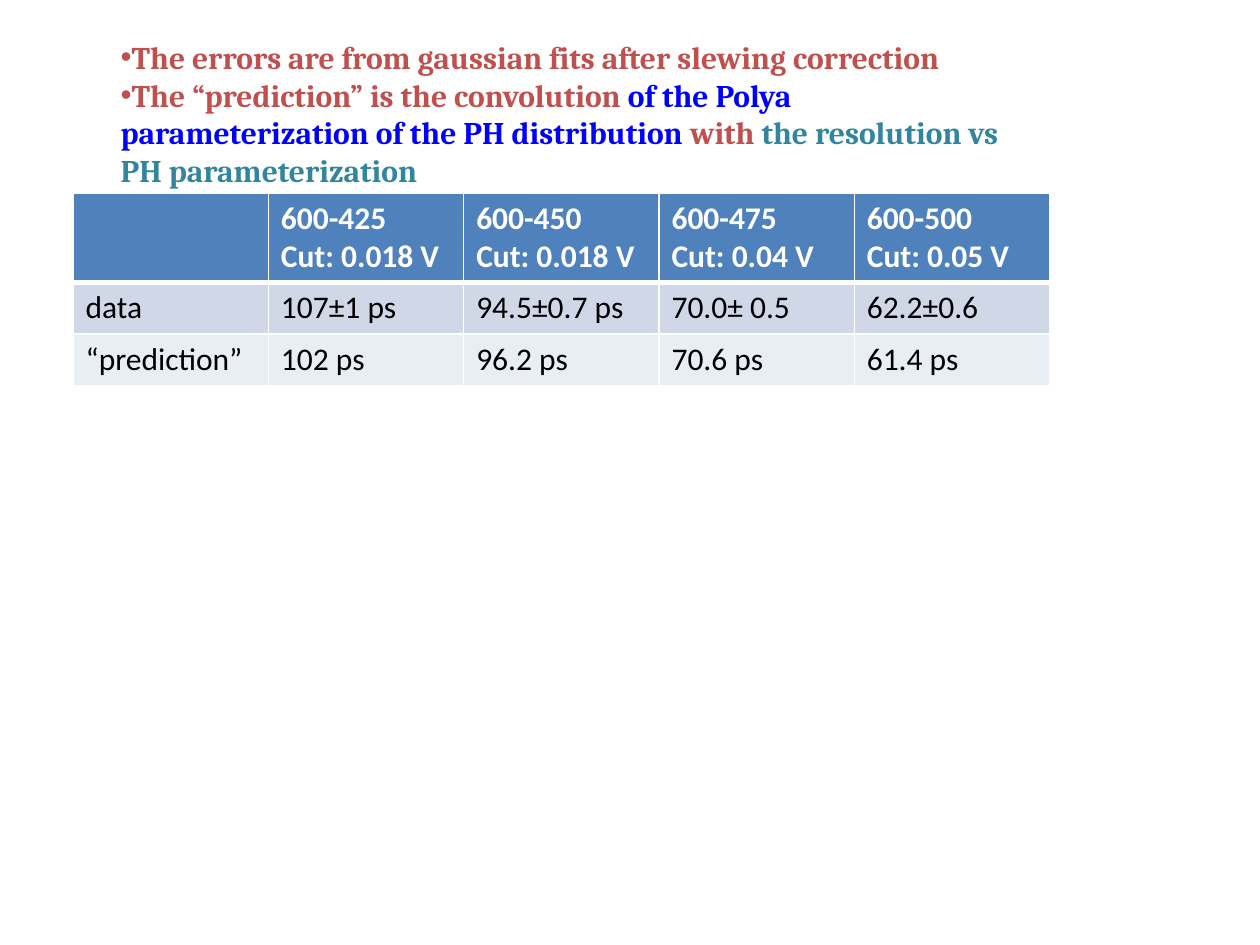
from dataclasses import dataclass

from lxml.etree import SubElement
from pptx import Presentation
from pptx.dml.color import RGBColor
from pptx.enum.text import MSO_AUTO_SIZE
from pptx.oxml import parse_xml
from pptx.oxml.ns import nsdecls, qn
from pptx.util import Inches, Pt

WHITE, BLACK = "FFFFFF", "000000"
RED, BLUE, TEAL = "C0504D", "0000FF", "31859C"


@dataclass
class ColouredText:
    text: str
    colour: str


@dataclass
class TableRow:
    texts: list[str]
    height: float
    fill: str
    colour: str = BLACK
    bold: bool = False
    bottom_border: int = 1


NOTES = [
    [ColouredText("The errors are from gaussian fits after slewing correction", RED)],
    [
        ColouredText("The “prediction” is the convolution ", RED),
        ColouredText("of the Polya parameterization of the PH distribution ", BLUE),
        ColouredText("with ", RED),
        ColouredText("the resolution vs PH parameterization", TEAL),
    ],
]
ROWS = [
    TableRow(
        ["", "600-425\nCut: 0.018 V", "600-450\nCut: 0.018 V",
         "600-475\nCut: 0.04 V", "600-500\nCut: 0.05 V"],
        0.69, "4F81BD", WHITE, True, 3,
    ),
    TableRow(["data", "107±1 ps", "94.5±0.7 ps", "70.0± 0.5", "62.2±0.6"], 0.41, "D0D8E8"),
    TableRow(["“prediction”", "102 ps", "96.2 ps", "70.6 ps", "61.4 ps"], 0.41, "E9EDF4"),
]


def rgb(colour: str) -> RGBColor:
    return RGBColor.from_string(colour)


def format_font(font, name: str, colour: str, bold: bool) -> None:
    font.name = name
    font.size = Pt(18)
    font.bold = bold
    font.color.rgb = rgb(colour)


def add_bullet(paragraph) -> None:
    properties = paragraph._p.get_or_add_pPr()
    SubElement(properties, qn("a:buFont")).set("typeface", "Arial")
    SubElement(properties, qn("a:buChar")).set("char", "•")


def set_borders(cell, top: int, bottom: int) -> None:
    properties = cell._tc.get_or_add_tcPr()
    widths = {"lnL": 1, "lnR": 1, "lnT": top, "lnB": bottom}
    for position, (side, width) in enumerate(widths.items()):
        border = parse_xml(
            f'<a:{side} {nsdecls("a")} w="{Pt(width)}"><a:solidFill>'
            f'<a:srgbClr val="{WHITE}"/></a:solidFill></a:{side}>'
        )
        properties.insert(position, border)


def add_results_table(slide, rows: list[TableRow]) -> None:
    column_count = len(rows[0].texts)
    frame = slide.shapes.add_table(
        len(rows), column_count, Inches(0.58), Inches(1.53),
        Inches(1.55 * column_count), Inches(sum(row.height for row in rows)),
    )
    table = frame.table
    top_border = 1
    for row_index, row in enumerate(rows):
        table.rows[row_index].height = Inches(row.height)
        for column_index, text in enumerate(row.texts):
            cell = table.cell(row_index, column_index)
            cell.fill.solid()
            cell.fill.fore_color.rgb = rgb(row.fill)
            set_borders(cell, top_border, row.bottom_border)
            cell.text_frame.text = text
            for paragraph in cell.text_frame.paragraphs:
                for run in paragraph.runs:
                    format_font(run.font, "Calibri", row.colour, row.bold)
        top_border = row.bottom_border


def add_notes_box(slide, notes: list[list[ColouredText]]) -> None:
    box = slide.shapes.add_textbox(Inches(0.86), Inches(0.25), Inches(7.47), Inches(1.31))
    text_frame = box.text_frame
    text_frame.word_wrap = True
    text_frame.auto_size = MSO_AUTO_SIZE.SHAPE_TO_FIT_TEXT
    for index, parts in enumerate(notes):
        paragraph = text_frame.add_paragraph() if index else text_frame.paragraphs[0]
        add_bullet(paragraph)
        for part in parts:
            run = paragraph.add_run()
            run.text = part.text
            format_font(run.font, "Cambria", part.colour, True)


def main() -> None:
    presentation = Presentation()
    presentation.slide_width = Inches(10)
    presentation.slide_height = Inches(7.5)
    slide = presentation.slides.add_slide(presentation.slide_layouts[6])

    # Measured and predicted resolutions
    add_results_table(slide, ROWS)

    # Notes above the table
    add_notes_box(slide, NOTES)

    presentation.save("out.pptx")


if __name__ == "__main__":
    main()
